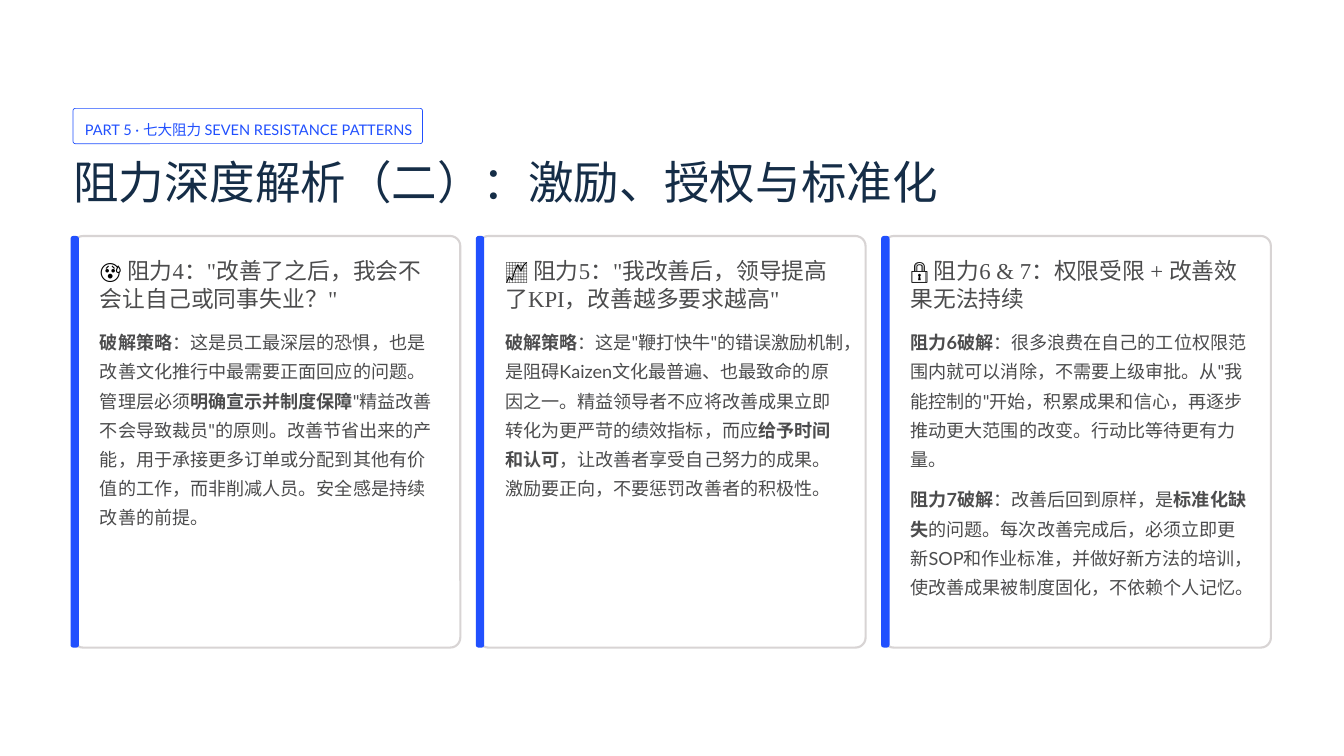
from pptx import Presentation
from pptx.dml.color import RGBColor
from pptx.enum.shapes import MSO_SHAPE
from pptx.util import Inches, Pt

COLORS = {
    "white": "FFFFFF",
    "blue": "2150FE",
    "navy": "152D47",
    "border": "D8D4D4",
    "body": "4C4C4D",
    "black": "000000",
}

TAG = {"size": Pt(12.5), "name": "Lato"}
TITLE = {"size": Pt(39), "name": "Times New Roman"}
HEADING = {"size": Pt(19.5), "name": "Times New Roman"}
BODY = {"size": Pt(15.5), "name": "Lato"}

LEFT, CONTENT_W = 0.87, 14.26
CARD_TOP, CARD_W, CARD_H = 2.81, 4.61, 4.9
TEXT_W = 4.05

# Each card: icon, heading, and body blocks as (top, height, text);
# ** marks the start and end of bold text
CARDS = [
    ("😰", '阻力4："改善了之后，我会不会让自己或同事失业？"', [
        (3.86, 2.43,
         '**破解策略**：这是员工最深层的恐惧，也是改善文化推行中最需要正面回应的问题。'
         '管理层必须**明确宣示并制度保障**"精益改善不会导致裁员"的原则。'
         '改善节省出来的产能，用于承接更多订单或分配到其他有价值的工作，而非削减人员。'
         '安全感是持续改善的前提。'),
    ]),
    ("📈", '阻力5："我改善后，领导提高了KPI，改善越多要求越高"', [
        (3.86, 2.43,
         '**破解策略**：这是"鞭打快牛"的错误激励机制，是阻碍Kaizen文化最普遍、也最致命的原因之一。'
         '精益领导者不应将改善成果立即转化为更严苛的绩效指标，而应**给予时间和认可**，'
         '让改善者享受自己努力的成果。激励要正向，不要惩罚改善者的积极性。'),
    ]),
    ("🔒", "阻力6 & 7：权限受限 + 改善效果无法持续", [
        (3.86, 1.74,
         '**阻力6破解**：很多浪费在自己的工位权限范围内就可以消除，不需要上级审批。'
         '从"我能控制的"开始，积累成果和信心，再逐步推动更大范围的改变。行动比等待更有力量。'),
        (5.73, 1.74,
         '**阻力7破解**：改善后回到原样，是**标准化缺失**的问题。'
         '每次改善完成后，必须立即更新SOP和作业标准，并做好新方法的培训，'
         '使改善成果被制度固化，不依赖个人记忆。'),
    ]),
]


def rgb(name):
    return RGBColor.from_string(COLORS[name])


def add_box(s, x, y, w, h, radius, fill=None, line=None, line_width=0):
    """Rounded rectangle with optional fill and outline."""
    sp = s.shapes.add_shape(MSO_SHAPE.ROUNDED_RECTANGLE,
                            Inches(x), Inches(y), Inches(w), Inches(h))
    sp.shadow.inherit = False
    sp.adjustments[0] = radius
    if fill:
        sp.fill.solid()
        sp.fill.fore_color.rgb = rgb(fill)
    else:
        sp.fill.background()
    if line:
        sp.line.color.rgb = rgb(line)
        sp.line.width = Pt(line_width)
    else:
        sp.line.fill.background()


def add_text(s, x, y, w, h, runs, font, spacing):
    """Text box with one paragraph; runs are (text, colour, bold)."""
    tf = s.shapes.add_textbox(Inches(x), Inches(y), Inches(w), Inches(h)).text_frame
    tf.word_wrap = True
    for side in ("left", "top", "right", "bottom"):
        setattr(tf, f"margin_{side}", 0)
    p = tf.paragraphs[0]
    p.line_spacing = Pt(spacing)
    for text, color, bold in runs:
        r = p.add_run()
        r.text = text
        for key, value in {**font, "bold": bold}.items():
            setattr(r.font, key, value)
        r.font.color.rgb = rgb(color)


def bold_runs(text):
    """Every second part between ** marks is bold."""
    return [(part, "body", i % 2 == 1)
            for i, part in enumerate(text.split("**")) if part]


def add_card(s, x, icon, heading, blocks):
    add_box(s, x, CARD_TOP, CARD_W, CARD_H, 0.026, "white", "border", 1.8)
    add_box(s, x - 0.03, CARD_TOP, 0.1, CARD_H, 0.326, "blue")
    text_x = x + 0.32
    add_text(s, text_x, 3.05, TEXT_W, 0.68,
             [(icon, "black", False), (" " + heading, "body", False)], HEADING, 24)
    for top, height, text in blocks:
        add_text(s, text_x, top, TEXT_W, height, bold_runs(text), BODY, 25)


def main():
    prs = Presentation()
    prs.slide_width, prs.slide_height = Inches(16), Inches(9)
    s = prs.slides.add_slide(prs.slide_layouts[6])
    s.background.fill.solid()
    s.background.fill.fore_color.rgb = rgb("white")

    # Section tag and title, each wide enough for a single line
    add_box(s, LEFT, 1.29, 4.16, 0.42, 0.061, line="blue", line_width=0.6)
    add_text(s, 1.01, 1.37, 4.1, 0.28,
             [("PART 5 · 七大阻力 SEVEN RESISTANCE PATTERNS", "blue", False)],
             TAG, 20)
    add_text(s, LEFT, 1.81, 10.6, 0.68,
             [("阻力深度解析（二）：激励、授权与标准化", "navy", False)],
             TITLE, 48.5)

    # Cards spread evenly across the content width
    pitch = (CONTENT_W - CARD_W) / (len(CARDS) - 1)
    for i, card in enumerate(CARDS):
        add_card(s, LEFT + i * pitch, *card)

    prs.save("out.pptx")


if __name__ == "__main__":
    main()
